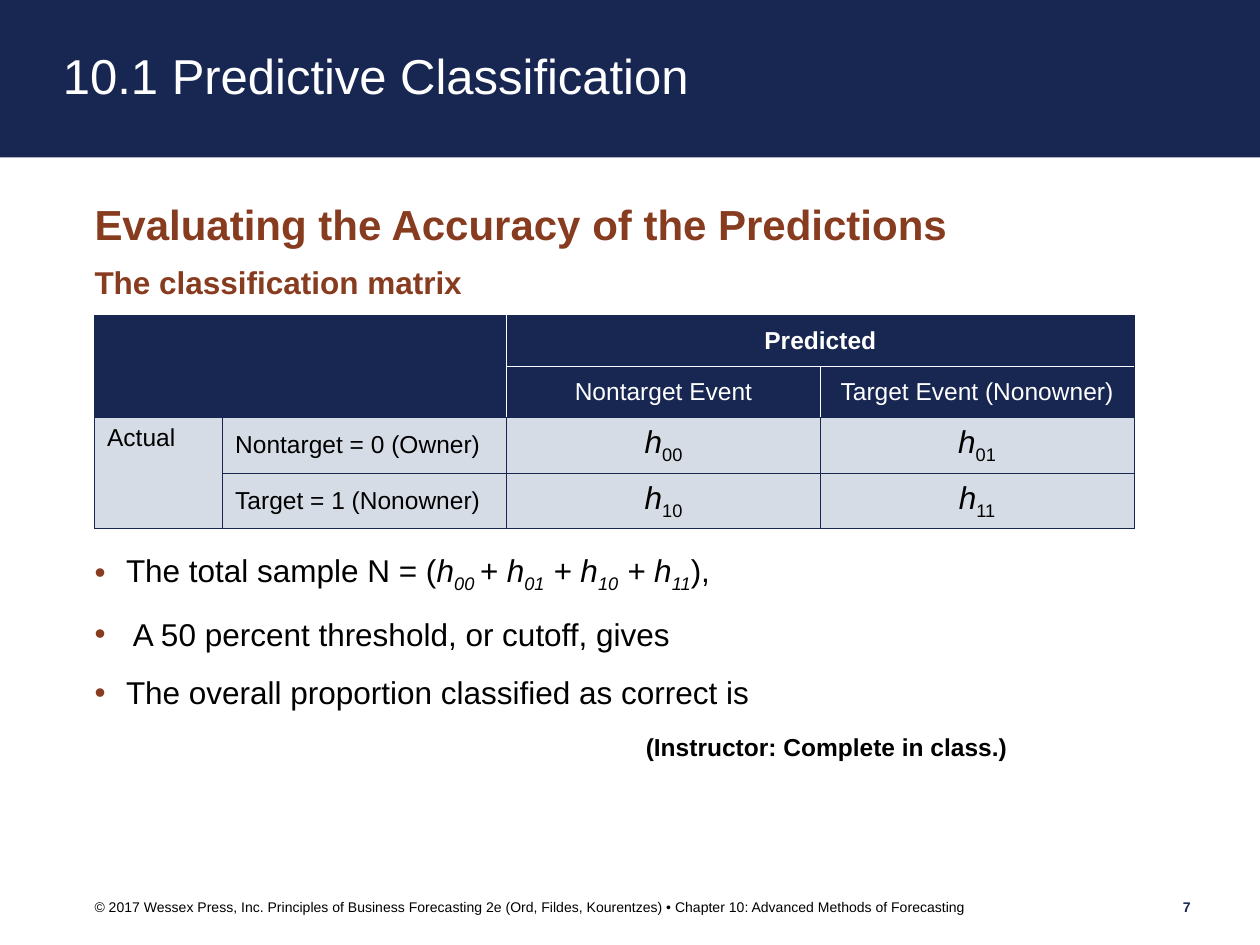
from pptx import Presentation
from pptx import util as u
from pptx.dml import color
from pptx.enum import shapes, text
from pptx.oxml import parse_xml
from pptx.oxml.ns import nsdecls

NAVY, RUST, GREY, WHITE, BLACK = "182752", "873B1F", "D6DCE5", "FFFFFF", "000000"
LEFT, MID, RIGHT = text.PP_ALIGN.LEFT, text.PP_ALIGN.CENTER, text.PP_ALIGN.RIGHT
TOP, CENTRE = text.MSO_ANCHOR.TOP, text.MSO_ANCHOR.MIDDLE


def rgb(code):
    return color.RGBColor.from_string(code)


def xml(tag, attrs, inner=""):
    return parse_xml(f'<a:{tag} {nsdecls("a")} {attrs}>{inner}</a:{tag}>')


def solid(code):
    return f'<a:solidFill><a:srgbClr val="{code}"/></a:solidFill>'


class Deck:
    """Holds the style and the current slide; lengths are in points."""

    font = "Arial"

    def __init__(self, wide, high):
        self.prs = Presentation()
        self.prs.slide_width, self.prs.slide_height = u.Pt(wide), u.Pt(high)
        self.slide = self.prs.slides.add_slide(self.prs.slide_layouts[6])

    def para(self, par, runs, size, ink=BLACK, align=LEFT, before=0, line=None):
        """Runs are (words, marks); marks: b bold, i italic, s subscript."""
        par.alignment = align
        par.space_before = u.Pt(before)
        if line:
            par.line_spacing = line
        for words, marks in runs:
            run = par.add_run()
            run.text = words
            font = run.font
            font.name, font.size = self.font, u.Pt(size)
            font.bold, font.italic = "b" in marks, "i" in marks
            font.color.rgb = rgb(ink)
            if "s" in marks:
                run._r.get_or_add_rPr().set("baseline", "-25000")

    def indent(self, par, left, bullet=None):
        props = par._p.get_or_add_pPr()
        props.set("marL", str(u.Pt(left)))
        if bullet:
            props.set("indent", str(-u.Pt(left)))
            props.append(xml("buClr", "", f'<a:srgbClr val="{bullet}"/>'))
            props.append(xml("buFont", f'typeface="{self.font}"'))
            props.append(xml("buChar", 'char="•"'))

    def frame(self, shape, anchor, pads=(0, 0, 0, 0)):
        box = shape.text_frame
        box.word_wrap, box.vertical_anchor = True, anchor
        (box.margin_left, box.margin_top,
         box.margin_right, box.margin_bottom) = map(u.Pt, pads)
        return box

    def band(self, x, y, w, h, fill, title, size):
        shape = self.slide.shapes.add_shape(
            shapes.MSO_SHAPE.RECTANGLE, *map(u.Pt, (x, y, w, h)))
        shape.shadow.inherit = False
        shape.fill.solid()
        shape.fill.fore_color.rgb = rgb(fill)
        shape.line.fill.background()
        box = self.frame(shape, CENTRE, (36, 3.6, 0, 3.6))
        self.para(box.paragraphs[0], [(title, "")], size, WHITE, line=0.9)

    def box(self, x, y, w, h, anchor=TOP):
        shape = self.slide.shapes.add_textbox(*map(u.Pt, (x, y, w, h)))
        return self.frame(shape, anchor)

    def label(self, x, y, w, h, words, marks, size, ink, align=LEFT):
        box = self.box(x, y, w, h, CENTRE)
        self.para(box.paragraphs[0], [(words, marks)], size, ink, align)

    def grid(self, x, y, cols, rows, spans):
        shape = self.slide.shapes.add_table(
            len(rows), len(cols), *map(u.Pt, (x, y, sum(cols), sum(rows))))
        table = shape.table
        table.first_row = table.horz_banding = False
        for col, w in zip(table.columns, cols):
            col.width = u.Pt(w)
        for row, h in zip(table.rows, rows):
            row.height = u.Pt(h)
        for first, last in spans:
            table.cell(*first).merge(table.cell(*last))
        return table

    def paint(self, cell, fill, edges):
        props = cell._tc.get_or_add_tcPr()
        for side, ink in edges.items():
            props.append(xml("ln" + side, f'w="{u.Pt(0.5)}"', solid(ink)))
        cell.fill.solid()
        cell.fill.fore_color.rgb = rgb(fill)


def term(sub, marks=""):
    return [("h", "i"), (sub, "s" + marks)]


def main():
    deck = Deck(720, 540)

    # Title band
    deck.band(0, 0, 720, 90, NAVY, "10.1 Predictive Classification", 28)

    # Headings
    box = deck.box(54, 116.64, 576.7, 54.7)
    deck.para(box.paragraphs[0], [("Evaluating the Accuracy of the Predictions", "b")],
              24, RUST, line=0.9)
    deck.para(box.add_paragraph(), [("The classification matrix", "b")],
              18, RUST, before=10, line=0.9)

    # Classification matrix: fills and borders
    heads, cols, rows = 2, [73.2, 162.4, 179.2, 179.2], [29.16] * 4
    table = deck.grid(54, 180.36, cols, rows,
                      [((0, 0), (1, 1)), ((0, 2), (0, 3)), ((2, 0), (3, 0))])
    for r in range(len(rows)):
        for c in range(len(cols)):
            cell = table.cell(r, c)
            head = r < heads
            inner = {"L": head and c > 0,
                     "R": head and c + cell.span_width < len(cols),
                     "T": head and r > 0,
                     "B": r + cell.span_height < heads}
            edges = {side: WHITE if on else NAVY for side, on in inner.items()}
            deck.paint(cell, NAVY if head else GREY, edges)

    # Classification matrix: words
    words = {
        (0, 2): ("Predicted", "b", MID),
        (1, 2): ("Nontarget Event", "", MID),
        (1, 3): ("Target Event (Nonowner)", "", MID),
        (2, 0): ("Actual", "", LEFT),
        (2, 1): ("Nontarget = 0 (Owner)", "", LEFT),
        (3, 1): ("Target = 1 (Nonowner)", "", LEFT),
    }
    for (r, c), (word, marks, align) in words.items():
        cell = table.cell(r, c)
        cell.vertical_anchor = TOP if c == 0 else CENTRE
        deck.para(cell.text_frame.paragraphs[0], [(word, marks)], 14,
                  WHITE if r < heads else BLACK, align)
    for i in range(2):
        for j in range(2):
            cell = table.cell(heads + i, 2 + j)
            cell.vertical_anchor = CENTRE
            deck.para(cell.text_frame.paragraphs[0], term(f"{i}{j}"), 18, align=MID)

    # Bullets
    total = [("The total sample N = (", ""), *term("00 ", "i"), ("+ ", "i"),
             *term("01", "i"), (" + ", "i"), *term("10", "i"), (" + ", "i"),
             *term("11", "i"), ("),", "")]
    points = [total,
              [(" A 50 percent threshold, or cutoff, gives", "")],
              [("The overall proportion classified as correct is", "")]]
    box = deck.box(54, 314.64, 594, 118.8)
    for n, runs in enumerate(points):
        par = box.add_paragraph() if n else box.paragraphs[0]
        deck.para(par, runs, 18, before=12 if n else 0)
        deck.indent(par, 18, RUST)
    par = box.add_paragraph()
    deck.para(par, [("(Instructor: Complete in class.)", "b")], 14, before=12)
    deck.indent(par, 315)

    # Footer
    deck.label(54, 511.2, 586, 14.4,
               "© 2017 Wessex Press, Inc. Principles of Business Forecasting 2e "
               "(Ord, Fildes, Kourentzes) • Chapter 10: Advanced Methods of Forecasting",
               "", 8, BLACK)
    deck.label(648, 511.2, 32.4, 14.4, "7", "b", 8, NAVY, RIGHT)

    deck.prs.save("out.pptx")


if __name__ == "__main__":
    main()
